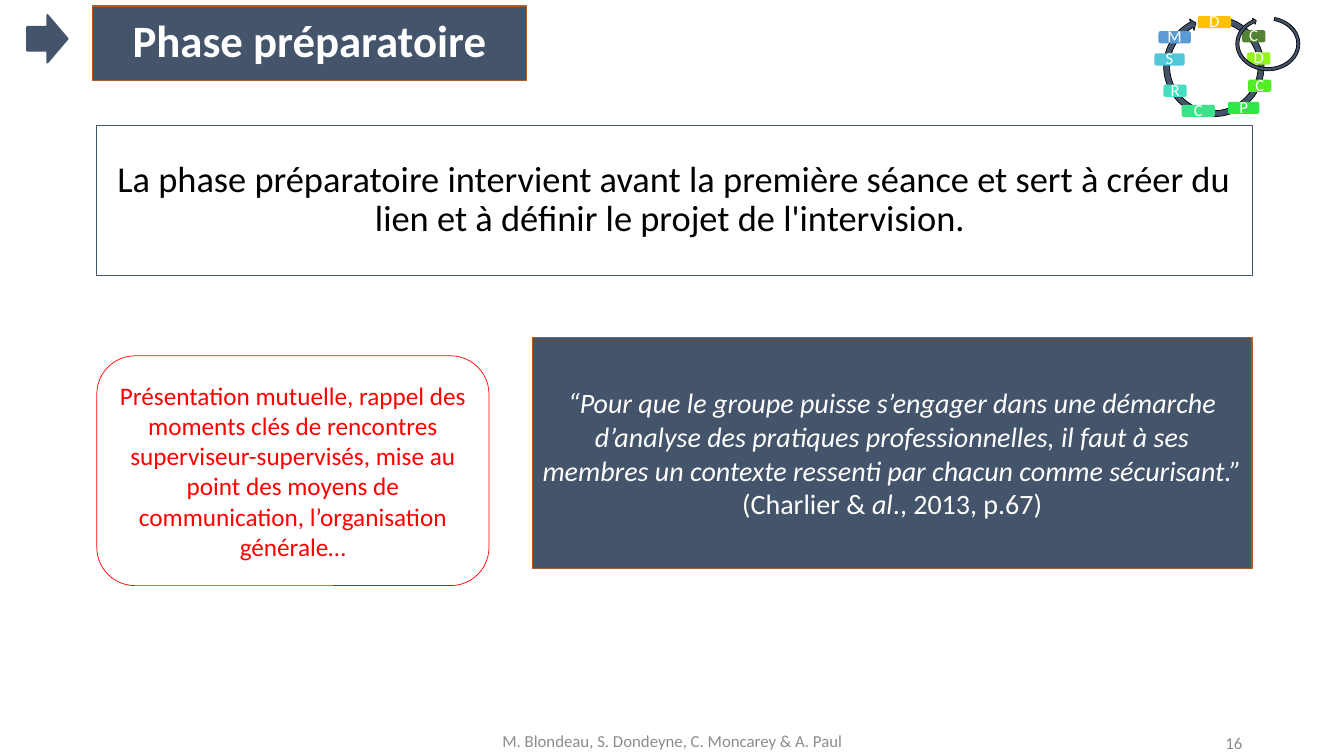
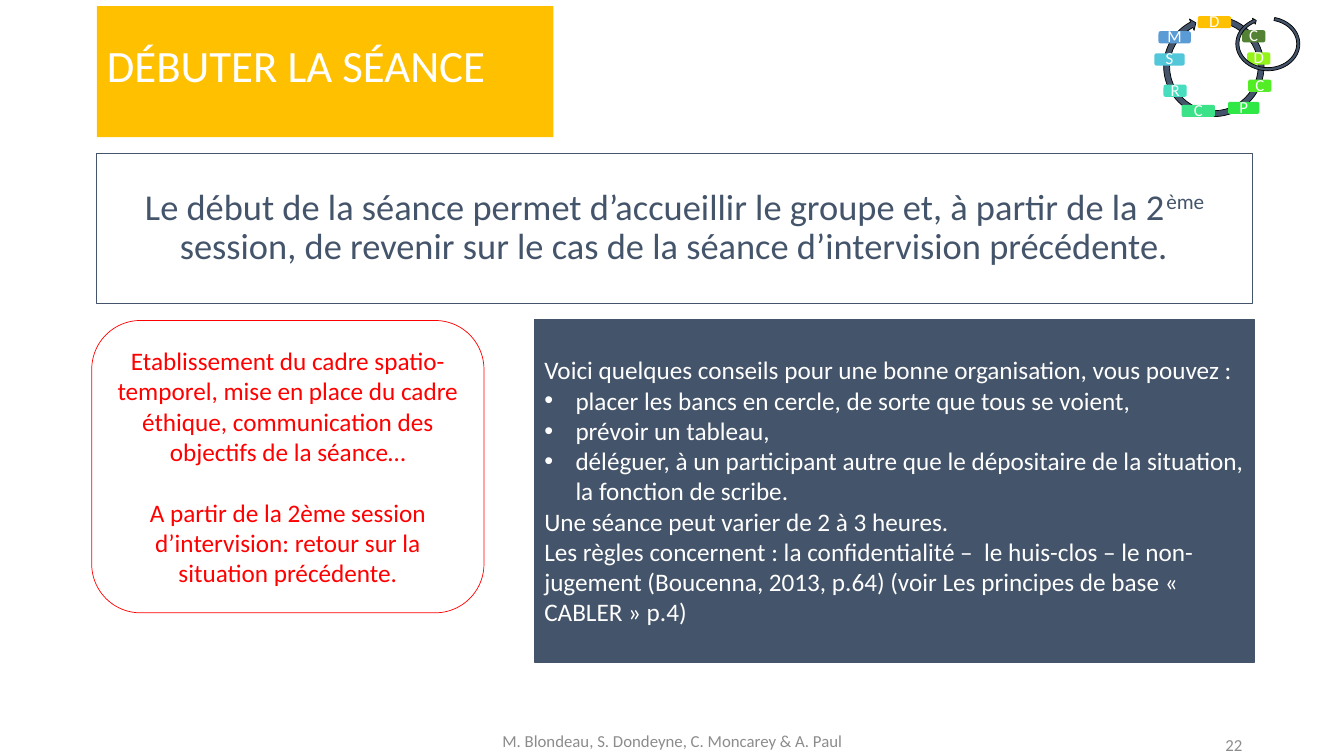
import pptx
import pptx.util
import pptx.dml.color
import pptx.enum.shapes
import pptx.enum.text
import pptx.oxml.ns
from lxml import etree

Inch, Pt = pptx.util.Inches, pptx.util.Pt
Form = pptx.enum.shapes.MSO_SHAPE
Align = pptx.enum.text.PP_ALIGN
Anchor = pptx.enum.text.MSO_ANCHOR
qn = pptx.oxml.ns.qn

# Shared look
FONT = "Calibri"
HUES = {"navy": "44546A", "rust": "AF5C24", "red": "FF0000", "gold": "FFC000",
        "gray": "8C8C8C", "white": "FFFFFF", "black": "000000"}
LEFT, WIDE = 0.96, 11.46
FOOT = "M. Blondeau, S. Dondeyne, C. Moncarey & A. Paul"

# Cycle logo: letter, left, top, width, fill
STEPS = [
    ("D", 11.88, 0.16, 0.33, "FFC000"), ("C", 12.32, 0.30, 0.23, "548235"),
    ("D", 12.37, 0.52, 0.23, "94F319"), ("C", 12.38, 0.79, 0.23, "52ED24"),
    ("P", 12.18, 1.01, 0.31, "30E845"), ("C", 11.72, 1.04, 0.33, "3BE287"),
    ("R", 11.54, 0.84, 0.23, "46DEBF"), ("S", 11.45, 0.53, 0.30, "51C7D9"),
    ("M", 11.49, 0.31, 0.32, "5B9BD5"),
]
RINGS = [((11.51, 0.13, 1.06, 1.06), (145.25, 169.45)),
         ((12.24, 0.15, 0.67, 0.57), (142.89, 170.81))]

# Content: a paragraph is a list of (text, marks); i italic, s superscript
SLIDES = [
    {
        "title": {"text": "Phase préparatoire", "at": (0.92, 0.06, 4.3, 0.74),
                  "form": "rect", "fill": "navy", "line": "rust", "bold": True,
                  "align": Align.CENTER, "pad": (0.1, 0.05)},
        "arrow": (0.27, 0.15, 0.4, 0.47),
        "lead": {"top": 1.24, "hue": "black", "runs": [
            ("La phase préparatoire intervient avant la première séance et sert à créer du "
             "lien et à définir le projet de l'intervision. ", "")]},
        "note": {"at": (0.96, 3.53, 3.89, 2.28), "paras": [
            "Présentation mutuelle, rappel des moments clés de rencontres "
            "superviseur-supervisés, mise au point des moyens de communication, "
            "l’organisation générale…"]},
        "panel": {"at": (5.28, 3.35, 7.14, 2.29), "line": "rust", "size": 20,
                  "align": Align.CENTER, "paras": [[
                      ("“Pour que le groupe puisse s’engager dans une démarche d’analyse des "
                       "pratiques professionnelles, il faut à ses membres un contexte ressenti "
                       "par chacun comme sécurisant.” ", "i"),
                      ("(Charlier & ", ""), ("al", "i"), ("., 2013, p.67)", "")]],
                  "list": ()},
        "page": ("16", 7.17),
    },
    {
        "title": {"text": "DÉBUTER LA SÉANCE", "at": (0.96, 0.06, 4.53, 1.3),
                  "form": "roundRect", "fill": "gold", "line": None, "bold": False,
                  "align": Align.LEFT, "pad": (0.1, 0.12)},
        "arrow": None,
        "lead": {"top": 1.52, "hue": "navy", "runs": [
            ("Le début de la séance permet d’accueillir le groupe et, à partir de la 2", ""),
            ("ème", "s"),
            (" session, de revenir sur le cas de la séance d’intervision précédente.", "")]},
        "note": {"at": (0.91, 3.18, 3.89, 2.9), "paras": [
            "Etablissement du cadre spatio-temporel, mise en place du cadre éthique, "
            "communication des objectifs de la séance…",
            "A partir de la 2ème session d’intervision: retour sur la situation précédente."]},
        "panel": {"at": (5.3, 3.17, 7.14, 3.4), "line": "navy", "size": 18,
                  "align": Align.LEFT, "paras": [[(text, "")] for text in (
                      "Voici quelques conseils pour une bonne organisation, vous pouvez :",
                      "placer les bancs en cercle, de sorte que tous se voient,",
                      "prévoir un tableau,",
                      "déléguer, à un participant autre que le dépositaire de la situation, "
                      "la fonction de scribe.",
                      "Une séance peut varier de 2 à 3 heures.",
                      "Les règles concernent : la confidentialité –  le huis-clos – le "
                      "non-jugement (Boucenna, 2013, p.64) (voir Les principes de base "
                      "« CABLER » p.4)")],
                  "list": (1, 2, 3)},
        "page": ("22", 7.19),
    },
]


def tint(hue):
    return pptx.dml.color.RGBColor.from_string(HUES.get(hue, hue))


def place(shape, at):
    shape.left, shape.top, shape.width, shape.height = map(Inch, at)


def paint(shape, fill=None, line=None, width=1):
    if fill:
        shape.fill.solid()
        shape.fill.fore_color.rgb = tint(fill)
    else:
        shape.fill.background()
    if line:
        shape.line.color.rgb = tint(line)
        shape.line.width = Pt(width)
    else:
        shape.line.fill.background()


def draw(shapes, form, at, fill=None, line=None, width=1):
    shape = shapes.add_shape(form, *map(Inch, at))
    shape.shadow.inherit = False
    paint(shape, fill, line, width)
    return shape


def bullet(para, char=None):
    props = para._p.get_or_add_pPr()
    step = Inch(0.31) if char else 0
    props.set("marL", str(step))
    props.set("indent", str(-step))
    if char:
        etree.SubElement(props, qn("a:buFont"), typeface="Arial")
        etree.SubElement(props, qn("a:buChar"), char=char)
    else:
        etree.SubElement(props, qn("a:buNone"))


def write(shape, paras, size, hue, align=Align.CENTER, bold=False, space=1, gap=0):
    """Fill a shape with paragraphs of marked runs, centred in height."""
    frame = shape.text_frame
    frame.word_wrap = True
    frame.auto_size = pptx.enum.text.MSO_AUTO_SIZE.NONE
    frame.vertical_anchor = Anchor.MIDDLE
    for i, runs in enumerate(paras):
        para = frame.add_paragraph() if i else frame.paragraphs[0]
        para.alignment, para.line_spacing = align, space
        para.space_before = Pt(gap if i else 0)
        for text, marks in runs:
            run = para.add_run()
            run.text = text
            font = run.font
            font.name, font.size, font.bold = FONT, Pt(size), bold
            font.italic = "i" in marks
            font.color.rgb = tint(hue)
            if "s" in marks:
                run._r.get_or_add_rPr().set("baseline", "30000")
    return frame


def head(slide, title):
    shape = slide.shapes.title
    place(shape, title["at"])
    geom = etree.SubElement(shape._element.spPr, qn("a:prstGeom"), prst=title["form"])
    etree.SubElement(geom, qn("a:avLst"))
    paint(shape, title["fill"], title["line"])
    frame = write(shape, [[(title["text"], "")]], 32, "white",
                  title["align"], title["bold"], 0.9)
    side, foot = title["pad"]
    frame.margin_left = frame.margin_right = Inch(side)
    frame.margin_top, frame.margin_bottom = Inch(0.05), Inch(foot)


def lead(slide, part):
    shape = slide.placeholders[1]
    place(shape, (LEFT, part["top"], WIDE, 1.49))
    paint(shape, "white", "navy", 0.5)
    frame = write(shape, [part["runs"]], 26, part["hue"], space=0.9)
    bullet(frame.paragraphs[0])


def ring(shapes, at, turn):
    shape = draw(shapes, Form.CIRCULAR_ARROW, at, "navy", "black", 0.5)
    for i, value in enumerate((0.055, 3.307, *turn, 0.058)):
        shape.adjustments[i] = value


def cycle(slide):
    group = slide.shapes.add_group_shape().shapes
    ring(group, *RINGS[0])
    for letter, left, top, width, fill in STEPS:
        badge = draw(group, Form.ROUNDED_RECTANGLE, (left, top, width, 0.12), fill)
        frame = write(badge, [[(letter, "")]], 12, "white", space=0.9)
        frame.margin_left = frame.margin_right = 0
        frame.margin_top = frame.margin_bottom = 0
    ring(slide.shapes, *RINGS[1])


def foot(slide, page):
    number, top = page
    for text, at, align in ((FOOT, (4.42, 7.15, 4.5, 0.4), Align.CENTER),
                            (number, (9.42, top, 3, 0.4), Align.RIGHT)):
        box = slide.shapes.add_textbox(*map(Inch, at))
        write(box, [[(text, "")]], 12, "gray", align)


def build(deck, data):
    slide = deck.slides.add_slide(deck.slide_layouts[1])
    head(slide, data["title"])
    lead(slide, data["lead"])
    if data["arrow"]:
        draw(slide.shapes, Form.RIGHT_ARROW, data["arrow"], "navy", "navy", 1.5)

    # Dark panel
    panel = data["panel"]
    box = draw(slide.shapes, Form.RECTANGLE, panel["at"], "navy", panel["line"])
    frame = write(box, panel["paras"], panel["size"], "white", panel["align"])
    for i in panel["list"]:
        bullet(frame.paragraphs[i], "•")

    # Red note
    note = data["note"]
    box = draw(slide.shapes, Form.ROUNDED_RECTANGLE, note["at"], None, "red", 0.5)
    write(box, [[(text, "")] for text in note["paras"]], 18, "red", gap=22)

    foot(slide, data["page"])
    cycle(slide)


def main():
    deck = pptx.Presentation()
    deck.slide_width, deck.slide_height = Inch(13.33), Inch(7.5)
    for data in SLIDES:
        build(deck, data)
    deck.save("out.pptx")


if __name__ == "__main__":
    main()
